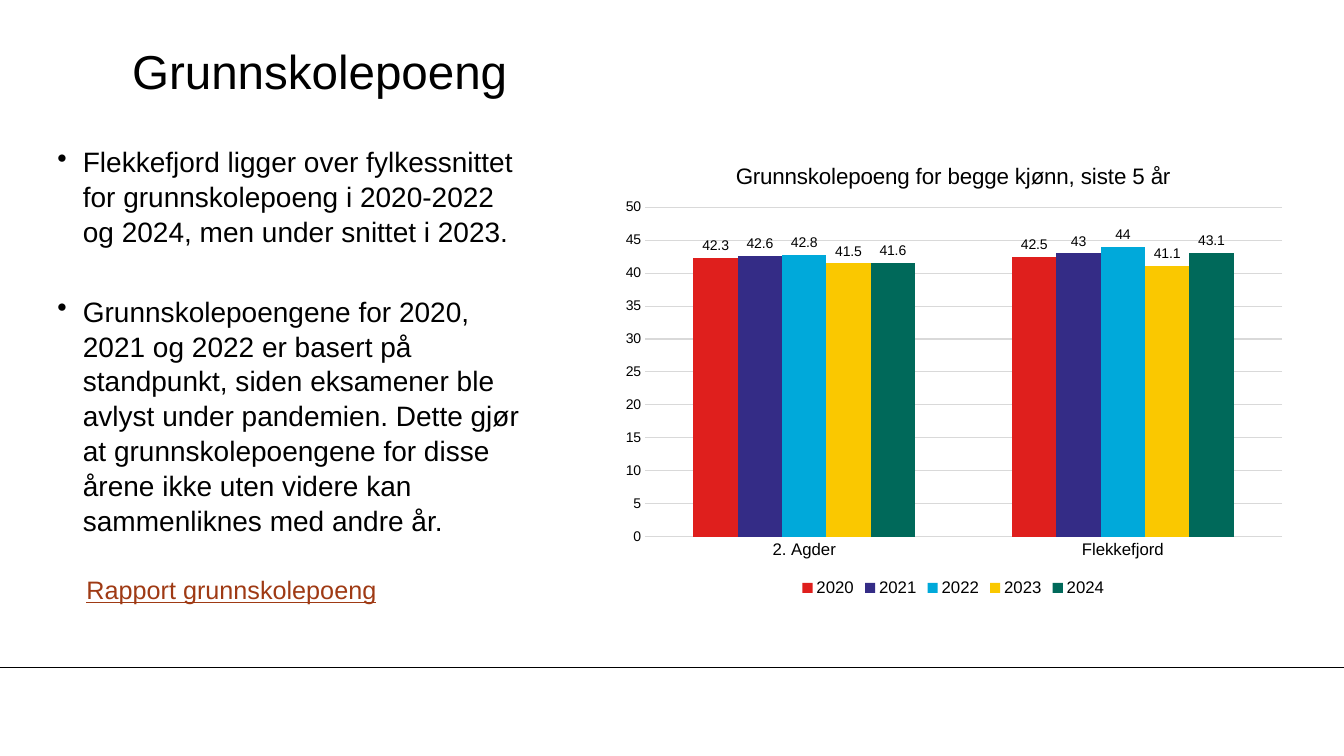
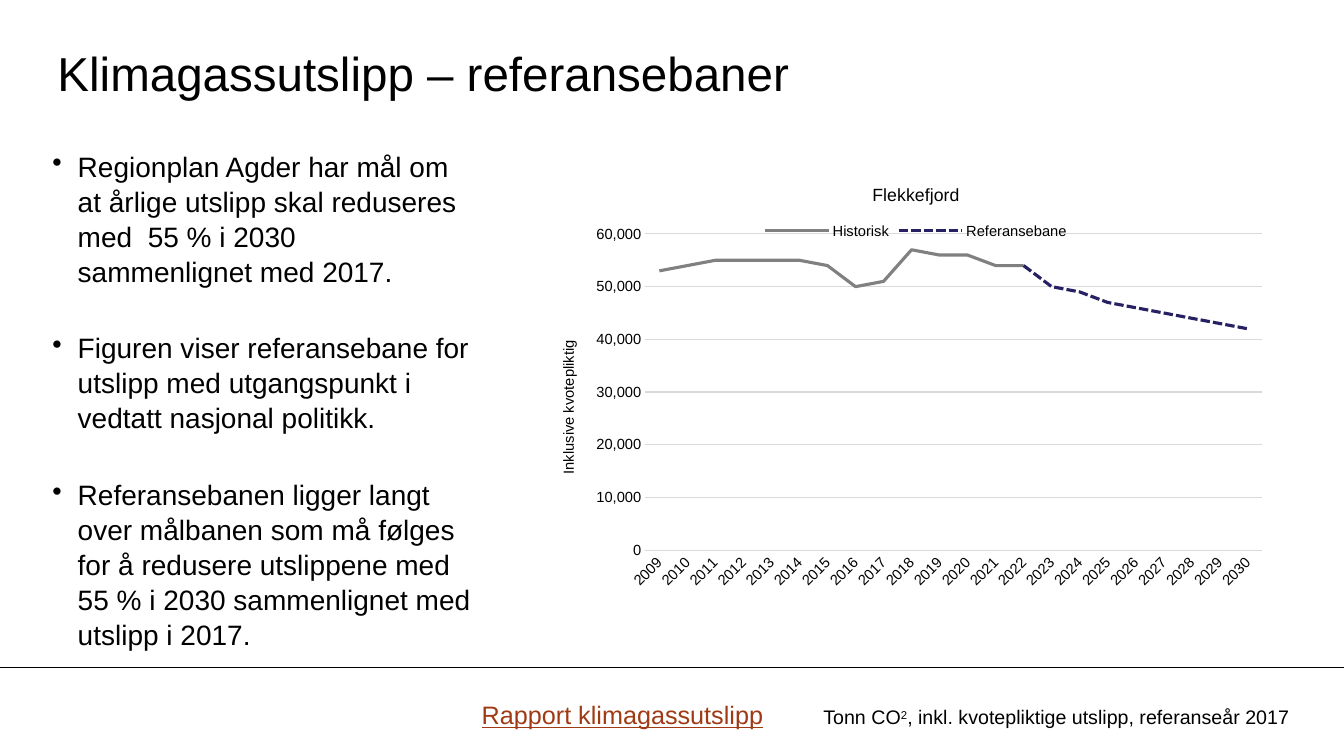
import pptx
import pptx.chart.data
import pptx.dml.color
import pptx.enum.chart
import pptx.enum.dml
import pptx.enum.shapes
import pptx.enum.text
import pptx.oxml
import pptx.oxml.ns
import pptx.util
from pptx.util import Cm

FONT = "Arial"
COLORS = {
    "text": "000000",
    "link": "9F3A14",
    "grid": "D9D9D9",
    "2020": "DF1F1D",
    "2021": "342C86",
    "2022": "00A9DA",
    "2023": "FAC800",
    "2024": "00695A",
    "Historisk": "808080",
    "Referansebane": "272164",
}
SLIDE_WIDTH, SLIDE_HEIGHT = Cm(33.87), Cm(19.05)
RULE_TOP = Cm(16.81)

SCHOOL_AREAS = ["2. Agder", "Flekkefjord"]
SCHOOL_POINTS = {
    "2020": [42.3, 42.5],
    "2021": [42.6, 43],
    "2022": [42.8, 44],
    "2023": [41.5, 41.1],
    "2024": [41.6, 43.1],
}

EMISSION_YEARS = [str(year) for year in range(2009, 2031)]
HISTORIC = [53000, 54000, 55000, 55000, 55000, 55000, 54000,
            50000, 51000, 57000, 56000, 56000, 54000, 54000]
REFERENCE = [54000, 50000, 49000, 47000, 46000, 45000, 44000, 43000, 42000]
EMISSIONS = {
    "Historisk": HISTORIC + [None] * (len(EMISSION_YEARS) - len(HISTORIC)),
    "Referansebane": [None] * (len(EMISSION_YEARS) - len(REFERENCE)) + REFERENCE,
}


def rgb(name):
    return pptx.dml.color.RGBColor.from_string(COLORS[name])


def style_font(font, size, color="text"):
    font.name = FONT
    font.size = pptx.util.Pt(size)
    font.bold = False
    font.color.rgb = rgb(color)


def style_line(line, color, width):
    line.color.rgb = rgb(color)
    line.width = pptx.util.Pt(width)


# Text
def add_run(paragraph, text, size, color="text"):
    run = paragraph.add_run()
    run.text = text
    style_font(run.font, size, color)
    return run


def add_frame(slide, left, top, width, height, margins=True):
    frame = slide.shapes.add_textbox(left, top, width, height).text_frame
    frame.word_wrap = True
    if not margins:
        frame.margin_left = frame.margin_right = 0
        frame.margin_top = frame.margin_bottom = 0
    return frame


def add_bullets(slide, left, top, width, height, texts, gap):
    frame = add_frame(slide, left, top, width, height, margins=False)
    for index, text in enumerate(texts):
        paragraph = frame.paragraphs[0] if index == 0 else frame.add_paragraph()
        properties = paragraph._p.get_or_add_pPr()
        properties.set("marL", str(Cm(0.64)))
        properties.set("indent", str(-Cm(0.64)))
        bullet = pptx.oxml.parse_xml(
            f'<a:buChar {pptx.oxml.ns.nsdecls("a")} char="•"/>')
        properties.append(bullet)
        paragraph.line_spacing = 1.04
        if index > 0:
            paragraph.space_before = pptx.util.Pt(gap)
        add_run(paragraph, text, 20)


def add_report_label(slide, left, top, width, text):
    frame = add_frame(slide, left, top, width, Cm(1.02))
    add_run(frame.paragraphs[0], text, 18, "link").font.underline = True


# Shared slide frame: title and bottom rule
def add_slide(presentation, title, title_left, title_top):
    slide = presentation.slides.add_slide(presentation.slide_layouts[6])
    rule = slide.shapes.add_connector(
        pptx.enum.shapes.MSO_CONNECTOR.STRAIGHT, 0, RULE_TOP, SLIDE_WIDTH, RULE_TOP)
    style_line(rule.line, "text", 0.75)
    rule._element.spPr.append(pptx.oxml.parse_xml(
        f'<a:effectLst {pptx.oxml.ns.nsdecls("a")}/>'))

    frame = add_frame(slide, title_left, title_top, Cm(28.19), Cm(1.91), margins=False)
    frame.vertical_anchor = pptx.enum.text.MSO_ANCHOR.MIDDLE
    add_run(frame.paragraphs[0], title, 34)
    return slide


# Charts
def set_plot_area(chart, left, top, width, height):
    plot_area = chart._chartSpace.chart.plotArea
    for layout in plot_area.findall(pptx.oxml.ns.qn("c:layout")):
        plot_area.remove(layout)
    values = {"x": left, "y": top, "w": width, "h": height}
    sizes = "".join(f'<c:{key} val="{value}"/>' for key, value in values.items())
    plot_area.insert(0, pptx.oxml.parse_xml(
        f'<c:layout {pptx.oxml.ns.nsdecls("c")}><c:manualLayout>'
        '<c:layoutTarget val="inner"/><c:xMode val="edge"/><c:yMode val="edge"/>'
        f'{sizes}</c:manualLayout></c:layout>'))


def rotate_text(element, degrees):
    body = element.find(".//" + pptx.oxml.ns.qn("a:bodyPr"))
    body.set("rot", str(degrees * 60000))
    body.set("vert", "horz")


def style_axis(axis, size):
    axis.major_tick_mark = pptx.enum.chart.XL_TICK_MARK.NONE
    axis.minor_tick_mark = pptx.enum.chart.XL_TICK_MARK.NONE
    style_font(axis.tick_labels.font, size)


def add_chart(slide, kind, box, categories, values, title, title_size,
              label_size, category_size, maximum, step, legend_position, plot_area):
    data = pptx.chart.data.CategoryChartData()
    data.categories = categories
    for name, numbers in values.items():
        data.add_series(name, numbers)
    chart = slide.shapes.add_chart(kind, *box, data).chart
    style_font(chart.font, label_size)

    chart.has_title = True
    add_run(chart.chart_title.text_frame.paragraphs[0], title, title_size)
    chart.has_legend = True
    chart.legend.position = legend_position
    chart.legend.include_in_layout = False
    style_font(chart.legend.font, category_size)

    style_axis(chart.category_axis, category_size)
    style_line(chart.category_axis.format.line, "grid", 0.75)
    value_axis = chart.value_axis
    style_axis(value_axis, label_size)
    value_axis.format.line.fill.background()
    value_axis.minimum_scale = 0
    value_axis.maximum_scale = maximum
    value_axis.major_unit = step
    value_axis.has_major_gridlines = True
    style_line(value_axis.major_gridlines.format.line, "grid", 0.75)

    chart.plots[0].vary_by_categories = False
    set_plot_area(chart, *plot_area)
    return chart


def add_school_chart(slide):
    chart = add_chart(
        slide, pptx.enum.chart.XL_CHART_TYPE.COLUMN_CLUSTERED,
        (Cm(15.39), Cm(3.61), Cm(17.27), Cm(11.53)),
        SCHOOL_AREAS, SCHOOL_POINTS,
        "Grunnskolepoeng for begge kjønn, siste 5 år", title_size=16,
        label_size=10, category_size=12, maximum=50, step=5,
        legend_position=pptx.enum.chart.XL_LEGEND_POSITION.BOTTOM,
        plot_area=(0.05, 0.14, 0.93, 0.72))
    plot = chart.plots[0]
    plot.gap_width = 219
    plot.overlap = 0
    for series in plot.series:
        series.format.fill.solid()
        series.format.fill.fore_color.rgb = rgb(series.name)
        labels = series.data_labels
        labels.show_value = True
        labels.position = pptx.enum.chart.XL_LABEL_POSITION.OUTSIDE_END
        style_font(labels.font, 10)


def add_emission_chart(slide):
    chart = add_chart(
        slide, pptx.enum.chart.XL_CHART_TYPE.LINE,
        (Cm(13.61), Cm(4.19), Cm(18.95), Cm(11.38)),
        EMISSION_YEARS, EMISSIONS, "Flekkefjord", title_size=12.6,
        label_size=10.5, category_size=10.5, maximum=60000, step=10000,
        legend_position=pptx.enum.chart.XL_LEGEND_POSITION.TOP,
        plot_area=(0.14, 0.15, 0.82, 0.7))
    rotate_text(chart.category_axis._element, -45)
    value_axis = chart.value_axis
    value_axis.tick_labels.number_format = "#,##0"
    value_axis.tick_labels.number_format_is_linked = False
    value_axis.has_title = True
    axis_title = value_axis.axis_title
    add_run(axis_title.text_frame.paragraphs[0], "Inklusive kvotepliktig", 10.5)
    rotate_text(axis_title._element, -90)

    historic, reference = chart.plots[0].series
    for series in (historic, reference):
        series.smooth = False
        style_line(series.format.line, series.name, 2.25)
    reference.format.line.dash_style = pptx.enum.dml.MSO_LINE.SQUARE_DOT


# Slides
def build_school_slide(presentation):
    slide = add_slide(presentation, "Grunnskolepoeng", Cm(3.33), Cm(0.81))
    add_bullets(slide, Cm(1.45), Cm(3.61), Cm(11.99), Cm(10.03), [
        "Flekkefjord ligger over fylkessnittet for grunnskolepoeng i 2020-2022 "
        "og 2024, men under snittet i 2023.",
        "Grunnskolepoengene for 2020, 2021 og 2022 er basert på standpunkt, siden "
        "eksamener ble avlyst under pandemien. Dette gjør at grunnskolepoengene for "
        "disse årene ikke uten videre kan sammenliknes med andre år.",
    ], gap=32)
    add_report_label(slide, Cm(1.93), Cm(14.35), Cm(8.38), "Rapport grunnskolepoeng")
    add_school_chart(slide)


def build_emission_slide(presentation):
    slide = add_slide(presentation, "Klimagassutslipp – referansebaner",
                      Cm(1.45), Cm(0.86))
    add_bullets(slide, Cm(1.32), Cm(3.73), Cm(10.57), Cm(12.5), [
        "Regionplan Agder har mål om at årlige utslipp skal reduseres med  55 % "
        "i 2030 sammenlignet med 2017.",
        "Figuren viser referansebane for utslipp med utgangspunkt i vedtatt "
        "nasjonal politikk.",
        "Referansebanen ligger langt over målbanen som må følges for å redusere "
        "utslippene med 55 % i 2030 sammenlignet med utslipp i 2017.",
    ], gap=30)
    add_emission_chart(slide)

    # Unit note and report label below the rule
    note = add_frame(slide, Cm(20.5), Cm(17.65), Cm(12.93), Cm(0.86)).paragraphs[0]
    add_run(note, "Tonn CO", 14)
    superscript = add_run(note, "2", 14)
    superscript.font._element.set("baseline", "30000")
    add_run(note, ", inkl. kvotepliktige utslipp, referanseår 2017", 14)
    add_report_label(slide, Cm(11.89), Cm(17.5), Cm(8.03), "Rapport klimagassutslipp")


def main():
    presentation = pptx.Presentation()
    presentation.slide_width = SLIDE_WIDTH
    presentation.slide_height = SLIDE_HEIGHT
    build_school_slide(presentation)
    build_emission_slide(presentation)
    presentation.save("out.pptx")


if __name__ == "__main__":
    main()
